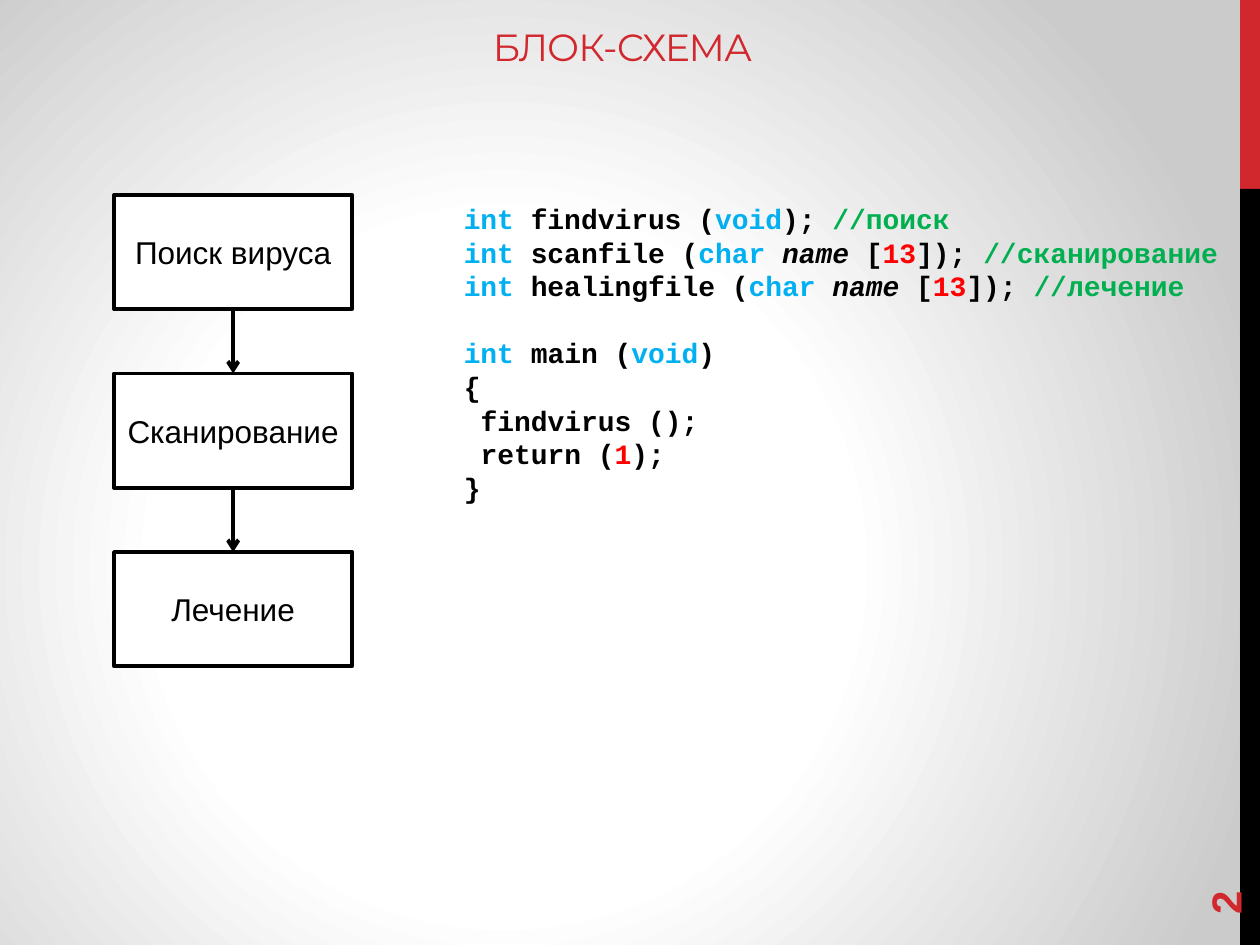
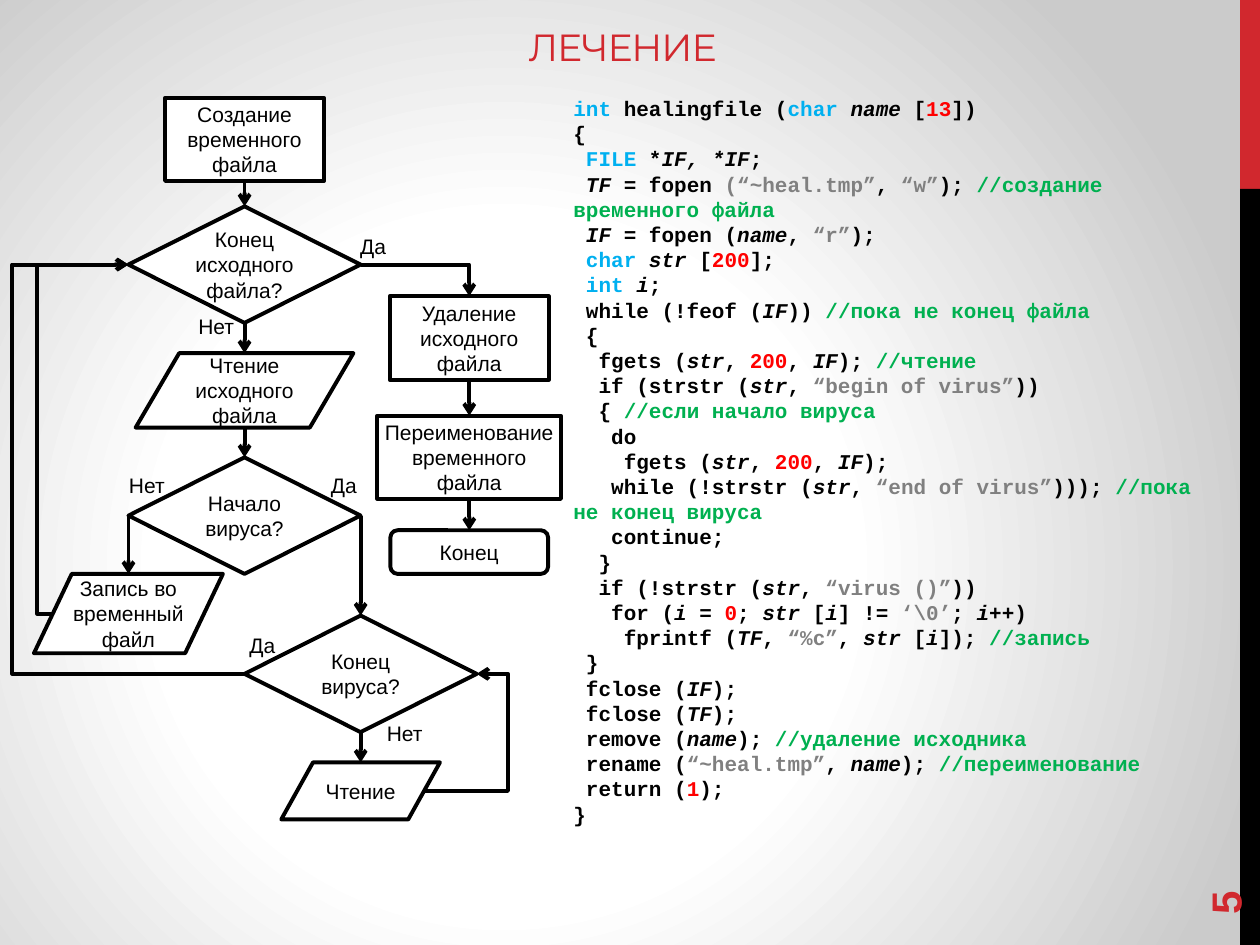
from dataclasses import dataclass

from lxml.etree import SubElement
from pptx import Presentation
from pptx.dml.color import RGBColor
from pptx.enum.shapes import MSO_CONNECTOR, MSO_SHAPE
from pptx.enum.text import MSO_ANCHOR, PP_ALIGN
from pptx.oxml import parse_xml
from pptx.oxml.ns import nsdecls, qn
from pptx.util import Cm, Pt

# ---- Content: lengths in centimetres ----
# Code marks: `keyword`  _variable_  #number#  @string@  $comment$
OVERVIEW_CODE = [
    [
        "`int `findvirus (`void`); $//поиск$",
        "`int `scanfile (`char `_name_ [#13#]); $//сканирование$",
        "`int `healingfile (`char `_name_ [#13#]); $//лечение$",
    ],
    [
        "`int` main (`void`)",
        "{",
        " findvirus ();",
        " return (#1#);",
        "}",
    ],
]
HEALING_CODE = [[
    "`int `healingfile (`char `_name_ [#13#])",
    "{",
    " `FILE` *_IF, *IF_;",
    " _TF _= fopen @(“~heal.tmp”@, @“w”@); $//создание временного файла$",
    " _IF _= fopen (_name_, @“r”@);",
    " `char `_str_ [#200#];",
    " `int `_i_;",
    " while (!feof (_IF_)) $//пока не конец файла$",
    " {",
    "  fgets (_str_, #200#, _IF_); $//чтение$",
    "  if (strstr (_str_, @“begin of virus”@))",
    "  { $//если начало вируса$",
    "   do",
    "    fgets (_str_, #200#, _IF_);",
    "   while (!strstr (_str_, @“end of virus”@))); $//пока не конец вируса$",
    "   continue;",
    "  }",
    "  if (!strstr (_str_, @“virus ()”@))",
    "   for (_i_ = #0#; _str_ [_i_] != @‘\\0’@; _i_++)",
    "    fprintf (_TF_, @“%c”@, _str_ [_i_]); $//запись$",
    " }",
    " fclose (_IF_);",
    " fclose (_TF_);",
    " remove (_name_); $//удаление исходника$",
    " rename (@“~heal.tmp”@, _name_); $//переименование$",
    " return (#1#);",
    "}",
]]

PROCESS, BOX = MSO_SHAPE.FLOWCHART_PROCESS, MSO_SHAPE.RECTANGLE
DECISION, DATA = MSO_SHAPE.FLOWCHART_DECISION, MSO_SHAPE.FLOWCHART_DATA
TERMINAL = MSO_SHAPE.FLOWCHART_ALTERNATE_PROCESS
TOP, LEFT, BOTTOM, RIGHT = range(4)

STAGES = ["Поиск вируса", "Сканирование", "Лечение"]
STAGE_TOP, STAGE_PITCH = 3.93, 3.6
BOX_SIZE, DECISION_SIZE = (3.2, 1.68), (4.68, 2.35)
MAIN = 4.93
WRITE, SKIP, FINISH = MAIN - DECISION_SIZE[0] / 2, MAIN + DECISION_SIZE[0] / 2, 9.46

# key: (kind, column centre, top, (width, height), text)
OVERVIEW_NODES = {
    stage: (PROCESS, 4.7, STAGE_TOP + row * STAGE_PITCH, (4.8, 2.3), stage)
    for row, stage in enumerate(STAGES)
}
HEALING_NODES = {
    "create": (BOX, MAIN, 1.97, BOX_SIZE, "Создание временного файла"),
    "file end": (DECISION, MAIN, 4.16, DECISION_SIZE, "Конец исходного файла?"),
    "read": (DATA, MAIN, 7.12, (4.39, 1.5), "Чтение исходного файла"),
    "virus start": (DECISION, MAIN, 9.22, DECISION_SIZE, "Начало вируса?"),
    "write": (DATA, WRITE, 11.57, (3.81, 1.6), "Запись во временный файл"),
    "virus end": (DECISION, SKIP, 12.41, DECISION_SIZE, "Конец вируса?"),
    "read on": (DATA, SKIP, 15.37, (3.2, 1.15), "Чтение"),
    "delete": (BOX, FINISH, 5.97, (3.2, 1.69), "Удаление исходного файла"),
    "rename": (BOX, FINISH, 8.38, (3.7, 1.68), "Переименование временного файла"),
    "end": (TERMINAL, FINISH, 10.69, (3.18, 0.88), "Конец"),
}
# (from, side, to, side, x of the detour)
OVERVIEW_LINKS = [(a, BOTTOM, b, TOP, None) for a, b in zip(STAGES, STAGES[1:])]
HEALING_LINKS = [
    ("create", BOTTOM, "file end", TOP, None),
    ("file end", BOTTOM, "read", TOP, None),
    ("read", BOTTOM, "virus start", TOP, None),
    ("virus start", LEFT, "write", TOP, None),
    ("virus start", RIGHT, "virus end", TOP, None),
    ("virus end", BOTTOM, "read on", TOP, None),
    ("file end", RIGHT, "delete", TOP, None),
    ("delete", BOTTOM, "rename", TOP, None),
    ("rename", BOTTOM, "end", TOP, None),
    ("read on", RIGHT, "virus end", RIGHT, 10.24),
    ("write", LEFT, "file end", LEFT, 0.75),
    ("virus end", LEFT, "file end", LEFT, 0.25),
]
HEALING_ANSWERS = [
    ("Да", 7.01, 4.58), ("Нет", 3.75, 6.2), ("Нет", 2.35, 9.4),
    ("Да", 6.42, 9.4), ("Да", 4.78, 12.62), ("Нет", 7.55, 14.4),
]

SLIDES = [
    dict(title="БЛОК-СХЕМА", number="2", code=OVERVIEW_CODE, code_size=16,
         code_area=(9.1, 3.94, 15.8, 14.4), nodes=OVERVIEW_NODES,
         links=OVERVIEW_LINKS, answers=[], node_size=18),
    dict(title="ЛЕЧЕНИЕ", number="5", code=HEALING_CODE, code_size=12,
         code_area=(11.31, 1.8, 13.59, 16.87), nodes=HEALING_NODES,
         links=HEALING_LINKS, answers=HEALING_ANSWERS, node_size=12),
]


# ---- Look ----
@dataclass(frozen=True)
class Theme:
    red: str = "D1282E"
    black: str = "000000"
    white: str = "FFFFFF"
    shade: str = "CBCBCB"
    title_font: str = "Montserrat"
    text_font: str = "Arial"
    code_font: str = "Courier New"
    title_size: float = 21.6
    number_size: float = 24
    answer_size: float = 12
    line_width: float = 2.25
    code_spacing: float = 1.0


THEME = Theme()
CODE_STYLES = {  # mark: (colour, italic)
    "`": ("00B0F0", False),
    "_": (THEME.black, True),
    "#": ("FF0000", False),
    "@": ("808080", False),
    "$": ("00B050", False),
}
PLAIN = (THEME.black, False)


# ---- Drawing ----
def apply_format(target, **values):
    for name, value in values.items():
        setattr(target, name, value)


def add_run(paragraph, text, font, size, color=THEME.black, bold=False, italic=False):
    run = paragraph.add_run()
    run.text = text
    apply_format(run.font, name=font, size=Pt(size), bold=bold, italic=italic)
    run.font.color.rgb = RGBColor.from_string(color)
    return run


def add_text_area(slide, area, anchor=MSO_ANCHOR.TOP):
    area_box = slide.shapes.add_textbox(*map(Cm, area))
    apply_format(area_box.text_frame, word_wrap=True, vertical_anchor=anchor)
    return area_box


def add_filled(slide, kind, area, color):
    filled = slide.shapes.add_shape(kind, *map(Cm, area))
    filled.shadow.inherit = False
    filled.fill.solid()
    filled.fill.fore_color.rgb = RGBColor.from_string(color)
    filled.line.fill.background()
    return filled


def draw_outline(line):
    line.color.rgb = RGBColor.from_string(THEME.black)
    line.width = Pt(THEME.line_width)


def set_background(master):
    """Give the master a glow that fades to grey away from its centre."""
    master.background.fill.gradient()
    gradient = master.element.find(".//" + qn("a:gradFill"))
    stops = "".join(
        f'<a:gs pos="{position}"><a:srgbClr val="{color}"/></a:gs>'
        for position, color in [(0, THEME.white), (44000, THEME.white), (100000, THEME.shade)])
    gradient.getparent().replace(gradient, parse_xml(
        f'<a:gradFill {nsdecls("a")} rotWithShape="1"><a:gsLst>{stops}</a:gsLst>'
        '<a:path path="circle"><a:fillToRect l="40000" t="60000" r="60000" b="40000"/>'
        '</a:path></a:gradFill>'))


def add_frame(slide, title, number):
    """Draw the side bands, the title and the slide number."""
    add_filled(slide, BOX, (25, 0, 0.4, 3.81), THEME.red)
    add_filled(slide, BOX, (25, 3.81, 0.4, 15.24), THEME.black)
    heading = add_text_area(slide, (0, 0.43, 25.1, 1.09), MSO_ANCHOR.BOTTOM)
    paragraph = heading.text_frame.paragraphs[0]
    paragraph.alignment = PP_ALIGN.CENTER
    run = add_run(paragraph, title, THEME.title_font, THEME.title_size, THEME.red)
    run.font._element.set("spc", "-60")
    page = add_text_area(slide, (22.86, 16.35, 3.66, 1.01), MSO_ANCHOR.MIDDLE)
    page.rotation = 270
    add_run(page.text_frame.paragraphs[0], number, THEME.text_font,
            THEME.number_size, THEME.red, bold=True)


def split_marks(line):
    """Yield (text, style) for each piece of a marked code line."""
    piece, mark = "", None
    for char in line:
        if char not in CODE_STYLES:
            piece += char
            continue
        if piece:
            yield piece, CODE_STYLES.get(mark, PLAIN)
        piece, mark = "", None if char == mark else char
    if piece:
        yield piece, CODE_STYLES.get(mark, PLAIN)


def add_code(slide, blocks, area, size):
    frame = add_text_area(slide, area).text_frame
    paragraph = frame.paragraphs[0]
    for block_index, block in enumerate(blocks):
        for line_index, line in enumerate(block):
            if block_index or line_index:
                paragraph = frame.add_paragraph()
            gap = 1.2 * size if block_index and not line_index else 0
            apply_format(paragraph, line_spacing=THEME.code_spacing, space_before=Pt(gap))
            code = line.lstrip()
            indent = Pt(0.6 * size * (len(line) - len(code)))
            properties = paragraph._p.get_or_add_pPr()
            properties.set("marL", "0")
            properties.set("indent", str(int(indent)))
            for text, (color, italic) in split_marks(code):
                add_run(paragraph, text, THEME.code_font, size, color, True, italic)


def add_node(slide, kind, centre, top, size, text, text_size):
    node = add_filled(slide, kind, (centre - size[0] / 2, top, *size), THEME.white)
    draw_outline(node.line)
    frame = node.text_frame
    apply_format(frame, word_wrap=True, vertical_anchor=MSO_ANCHOR.MIDDLE,
                 margin_left=0, margin_right=0)
    frame.paragraphs[0].alignment = PP_ALIGN.CENTER
    add_run(frame.paragraphs[0], text, THEME.text_font, text_size)
    return node


def side_point(node, side):
    """Return the middle of a side; slanted sides lie a tenth of the width inside."""
    kind, centre, top, (width, height), _ = node
    reach = width * (0.4 if kind == DATA else 0.5)
    return {TOP: (centre, top), BOTTOM: (centre, top + height),
            LEFT: (centre - reach, top + height / 2),
            RIGHT: (centre + reach, top + height / 2)}[side]


def add_link(slide, nodes, shapes, link):
    source, source_side, target, target_side, detour = link
    start = side_point(nodes[source], source_side)
    end = side_point(nodes[target], target_side)
    straight = abs(start[0] - end[0]) < 0.02 and detour is None
    kind = MSO_CONNECTOR.STRAIGHT if straight else MSO_CONNECTOR.ELBOW
    connector = slide.shapes.add_connector(kind, *map(Cm, start + end))
    draw_outline(connector.line)
    properties = connector._element.spPr
    SubElement(properties.find(qn("a:ln")), qn("a:tailEnd"), type="arrow")
    SubElement(properties, qn("a:effectLst"))
    if straight:
        if nodes[source][0] != DATA:
            connector.begin_connect(shapes[source], source_side)
        if nodes[target][0] != DATA:
            connector.end_connect(shapes[target], target_side)
        return
    geometry = properties.find(qn("a:prstGeom"))
    if detour is None:
        geometry.set("prst", "bentConnector2")
    else:
        bend = round(100000 * (detour - start[0]) / (end[0] - start[0]))
        SubElement(geometry.find(qn("a:avLst")), qn("a:gd"), name="adj1", fmla=f"val {bend}")


def add_flowchart(slide, nodes, links, answers, text_size):
    shapes = {key: add_node(slide, *node, text_size) for key, node in nodes.items()}
    for link in links:
        add_link(slide, nodes, shapes, link)
    for answer, left, top in answers:
        label = add_text_area(slide, (left, top, 1.47, 0.76))
        add_run(label.text_frame.paragraphs[0], answer, THEME.text_font, THEME.answer_size)


def main():
    deck = Presentation()
    apply_format(deck, slide_width=Cm(25.4), slide_height=Cm(19.05))
    set_background(deck.slide_master)
    for content in SLIDES:
        slide = deck.slides.add_slide(deck.slide_layouts[6])
        add_frame(slide, content["title"], content["number"])
        add_code(slide, content["code"], content["code_area"], content["code_size"])
        add_flowchart(slide, content["nodes"], content["links"],
                      content["answers"], content["node_size"])
    deck.save("out.pptx")


if __name__ == "__main__":
    main()
